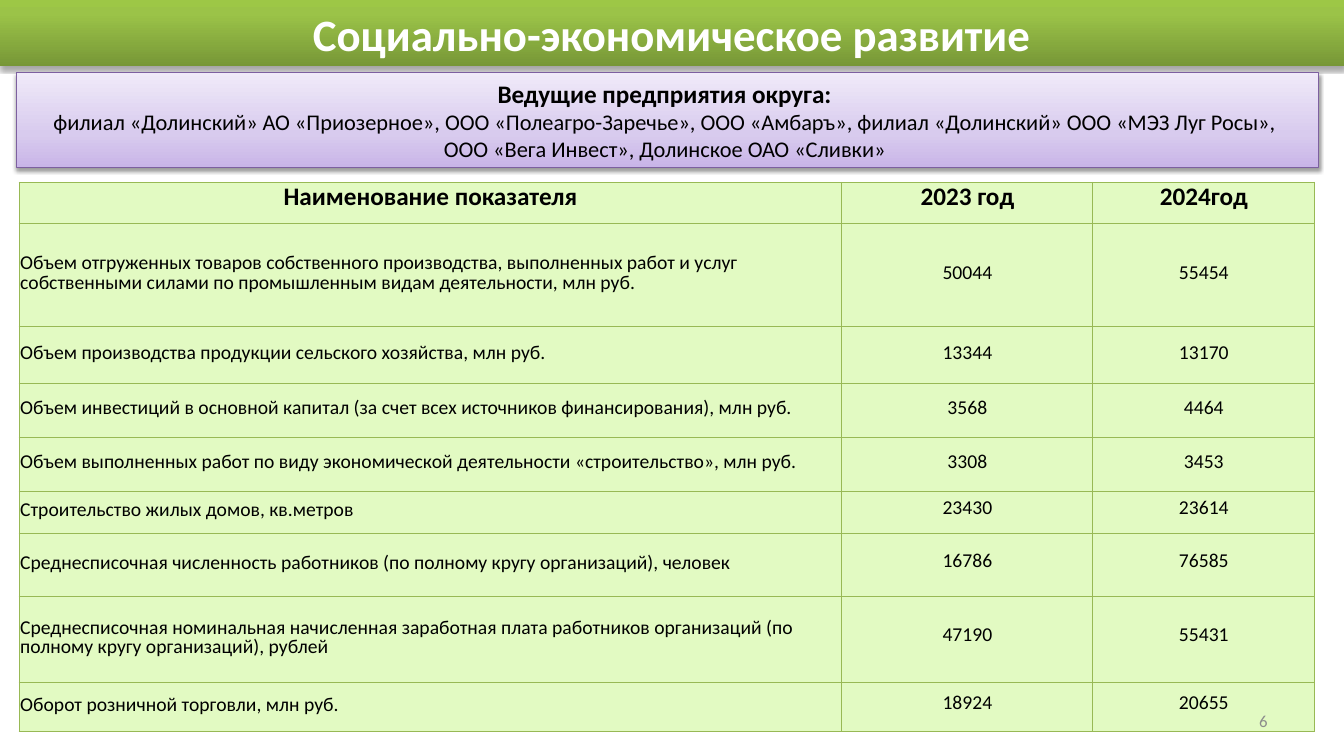
import dataclasses

import lxml.etree
import pptx
import pptx.enum.shapes
import pptx.enum.text
import pptx.oxml
import pptx.oxml.ns
import pptx.util
from pptx.dml.color import RGBColor
from pptx.util import Inches

ALIGN = pptx.enum.text.PP_ALIGN
MIDDLE = pptx.enum.text.MSO_ANCHOR.MIDDLE
qn = pptx.oxml.ns.qn


@dataclasses.dataclass(frozen=True)
class Theme:
    font: str = "Calibri"
    black: str = "000000"
    white: str = "FFFFFF"
    gray: str = "8C8C8C"
    violet: str = "7D60A0"
    border: str = "98B955"
    cell: str = "E2FAC2"
    title_gradient: tuple = ((0, "779737"), (80, "9BC348"), (100, "9DC746"))
    panel_gradient: tuple = ((0, "C9B5E8"), (35, "D8CBEE"), (100, "F0EAF9"))
    title_size: int = 32
    heading_size: int = 18
    panel_size: int = 16
    table_size: int = 14
    number_size: int = 12


def write(paragraph, text, *, theme, size, color=None, bold=False,
          align=ALIGN.CENTER, spacing=None):
    paragraph.alignment = align
    if spacing:
        paragraph.line_spacing = pptx.util.Pt(spacing)
    run = paragraph.add_run()
    run.text = text
    run.font.name = theme.font
    run.font.size = pptx.util.Pt(size)
    run.font.bold = bold
    run.font.color.rgb = RGBColor.from_string(color or theme.black)


class SlideBuilder:
    def __init__(self, slide, theme):
        self.slide = slide
        self.theme = theme

    def fill_text(self, frame, lines):
        frame.word_wrap = True
        frame.vertical_anchor = MIDDLE
        for index, (text, style) in enumerate(lines):
            paragraph = frame.add_paragraph() if index else frame.paragraphs[0]
            write(paragraph, text, theme=self.theme, **style)

    def panel(self, box, stops, lines, opacity, distance, outline=None):
        shape = self.slide.shapes.add_shape(
            pptx.enum.shapes.MSO_SHAPE.RECTANGLE, *map(Inches, box))
        shape.shadow.inherit = False
        shape.fill.gradient()
        if outline:
            shape.line.color.rgb = RGBColor.from_string(outline)
            shape.line.width = pptx.util.Pt(0.75)
        else:
            shape.line.fill.background()
        properties = shape._element.spPr
        self.gradient(properties.find(qn("a:gradFill")), stops)
        self.shadow(properties.find(qn("a:effectLst")), opacity, distance)
        self.fill_text(shape.text_frame, lines)

    def gradient(self, element, stops):
        for child in list(element):
            element.remove(child)
        stop_list = lxml.etree.SubElement(element, qn("a:gsLst"))
        for position, color in stops:
            stop = lxml.etree.SubElement(stop_list, qn("a:gs"), pos=str(position * 1000))
            lxml.etree.SubElement(stop, qn("a:srgbClr"), val=color)
        lxml.etree.SubElement(element, qn("a:lin"), ang="16200000", scaled="0")

    def shadow(self, effects, opacity, distance):
        shadow = lxml.etree.SubElement(
            effects, qn("a:outerShdw"), blurRad=str(pptx.util.Pt(3.1)),
            dist=str(pptx.util.Pt(distance)), dir="5400000", rotWithShape="0")
        color = lxml.etree.SubElement(shadow, qn("a:srgbClr"), val=self.theme.black)
        lxml.etree.SubElement(color, qn("a:alpha"), val=str(opacity * 1000))

    def text(self, box, text, **style):
        shape = self.slide.shapes.add_textbox(*map(Inches, box))
        self.fill_text(shape.text_frame, [(text, style)])

    def table(self, box, widths, heights, rows):
        table = self.slide.shapes.add_table(
            len(rows), len(widths), *map(Inches, box)).table
        table.first_row = table.horz_banding = False
        for column, width in zip(table.columns, widths):
            column.width = Inches(width)
        for row, height in zip(table.rows, heights):
            row.height = Inches(height)
        for row_index, values in enumerate(rows):
            for column_index, value in enumerate(values):
                header = row_index == 0
                label = column_index == 0
                self.cell(
                    table.cell(row_index, column_index), value, bold=header,
                    size=self.theme.heading_size if header else self.theme.table_size,
                    align=ALIGN.LEFT if label and not header else ALIGN.CENTER,
                    spacing=13.7 if label or row_index < 5 else 11)

    def cell(self, cell, text, **style):
        cell.margin_left = cell.margin_right = Inches(0.01)
        cell.margin_top = cell.margin_bottom = 0
        cell.vertical_anchor = MIDDLE
        properties = cell._tc.get_or_add_tcPr()
        for side in ("L", "R", "T", "B"):
            line = lxml.etree.SubElement(
                properties, qn(f"a:ln{side}"), w=str(pptx.util.Pt(0.75)))
            fill = lxml.etree.SubElement(line, qn("a:solidFill"))
            lxml.etree.SubElement(fill, qn("a:srgbClr"), val=self.theme.border)
        cell.fill.solid()
        cell.fill.fore_color.rgb = RGBColor.from_string(self.theme.cell)
        write(cell.text_frame.paragraphs[0], text, theme=self.theme, **style)


ROWS = (
    ("Наименование показателя", "2023 год", "2024год"),
    ("Объем отгруженных товаров собственного производства, выполненных работ и услуг "
     "собственными силами по промышленным видам деятельности, млн руб.", "50044", "55454"),
    ("Объем производства продукции сельского хозяйства, млн руб.", "13344", "13170"),
    ("Объем инвестиций в основной капитал (за счет всех источников финансирования), "
     "млн руб.", "3568", "4464"),
    ("Объем выполненных работ по виду экономической деятельности «строительство», "
     "млн руб.", "3308", "3453"),
    ("Строительство жилых домов, кв.метров", "23430", "23614"),
    ("Среднесписочная численность работников (по полному кругу организаций), человек",
     "16786", "76585"),
    ("Среднесписочная номинальная начисленная заработная плата работников организаций "
     "(по полному кругу организаций), рублей", "47190", "55431"),
    ("Оборот розничной торговли, млн руб.", "18924", "20655"),
)


def main():
    theme = Theme()
    presentation = pptx.Presentation()
    presentation.slide_width = Inches(13.33)
    presentation.slide_height = Inches(7.5)
    slide = presentation.slides.add_slide(presentation.slide_layouts[6])
    builder = SlideBuilder(slide, theme)

    title = {"size": theme.title_size, "color": theme.white, "bold": True}
    builder.panel((0, 0, 13.33, 0.66), theme.title_gradient,
                  [("Социально-экономическое развитие", title)],
                  opacity=35, distance=1.8)

    heading = {"size": theme.heading_size, "bold": True}
    body = {"size": theme.panel_size}
    builder.panel(
        (0.16, 0.72, 12.92, 0.94), theme.panel_gradient,
        [("Ведущие предприятия округа: ", heading),
         ("филиал «Долинский» АО «Приозерное», ООО «Полеагро-Заречье», ООО «Амбаръ», "
          "филиал «Долинский» ООО «МЭЗ Луг Росы», ", body),
         ("ООО «Вега Инвест», Долинское ОАО «Сливки» ", body)],
        opacity=38, distance=1.6, outline=theme.violet)

    builder.table((0.19, 1.81, 12.85, 5.45), (8.16, 2.49, 2.2),
                  (0.41, 1.02, 0.56, 0.54, 0.54, 0.41, 0.63, 0.85, 0.49), ROWS)
    builder.text((9.56, 6.95, 3.11, 0.4), "6", size=theme.number_size,
                 color=theme.gray, align=ALIGN.RIGHT)
    presentation.save("out.pptx")


if __name__ == "__main__":
    main()
